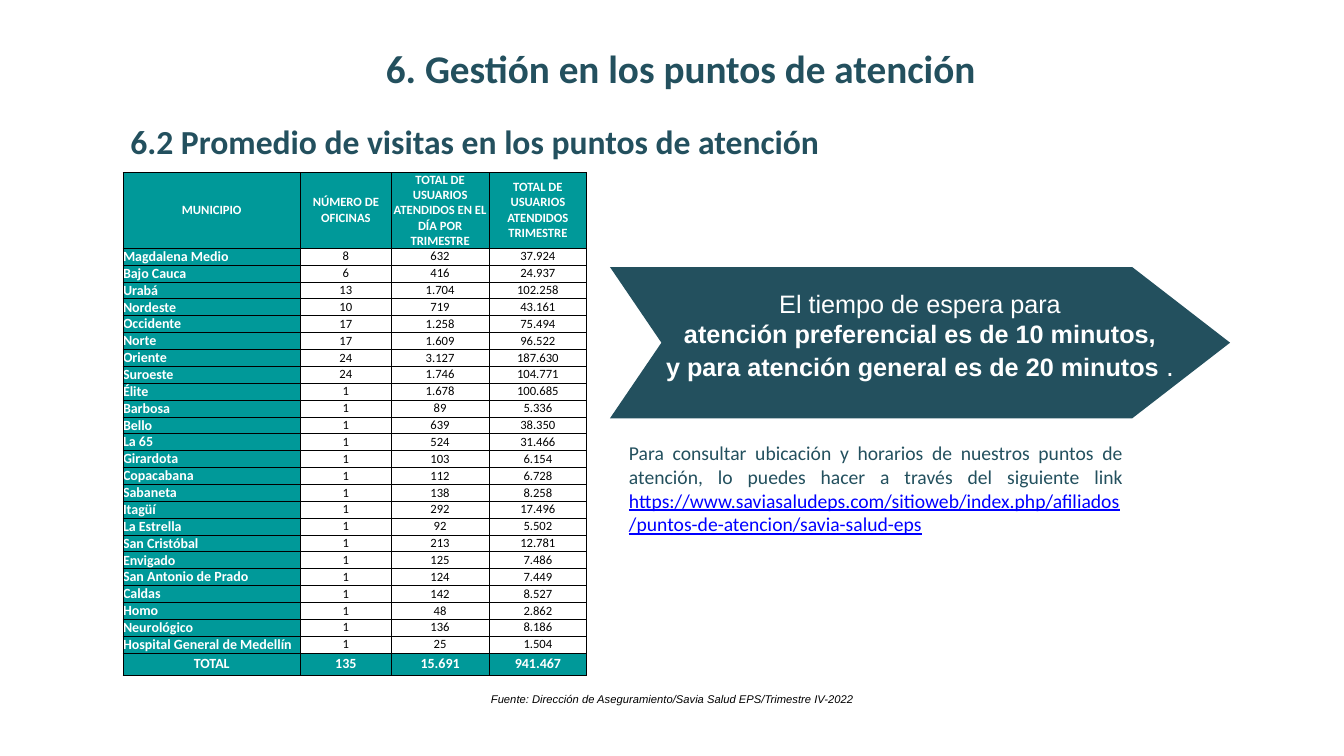
import pptx
import pptx.dml.color
import pptx.enum.text
import pptx.oxml
import pptx.oxml.ns
import pptx.util

Inches = pptx.util.Inches
ALIGN = pptx.enum.text.PP_ALIGN
ANCHOR = pptx.enum.text.MSO_ANCHOR

NAVY, TEAL, WHITE, BLACK, LINK_BLUE = "23505E", "009999", "FFFFFF", "000000", "0000FF"

TITLE = "6. Gestión en los puntos de atención"
SUBTITLE = "6.2 Promedio de visitas en los puntos de atención"
WAITING_TIMES = [
    "El tiempo de espera para",
    "atención preferencial es de 10 minutos,",
    "y para atención general es de 20 minutos ",
]
LINK_INTRO = ("Para consultar ubicación y horarios de nuestros puntos de atención, "
              "lo puedes hacer a través del siguiente link ")
LINK = "https://www.saviasaludeps.com/sitioweb/index.php/afiliados/puntos-de-atencion/savia-salud-eps"
FOOTNOTE = "Fuente: Dirección de Aseguramiento/Savia Salud EPS/Trimestre IV-2022"

HEADER = ("MUNICIPIO", "NÚMERO DE OFICINAS",
          "TOTAL DE USUARIOS ATENDIDOS EN EL DÍA POR TRIMESTRE",
          "TOTAL DE USUARIOS ATENDIDOS TRIMESTRE")
VISITS = [
    ("Magdalena Medio", "8", "632", "37.924"),
    ("Bajo Cauca", "6", "416", "24.937"),
    ("Urabá", "13", "1.704", "102.258"),
    ("Nordeste", "10", "719", "43.161"),
    ("Occidente", "17", "1.258", "75.494"),
    ("Norte", "17", "1.609", "96.522"),
    ("Oriente", "24", "3.127", "187.630"),
    ("Suroeste", "24", "1.746", "104.771"),
    ("Élite", "1", "1.678", "100.685"),
    ("Barbosa", "1", "89", "5.336"),
    ("Bello", "1", "639", "38.350"),
    ("La 65", "1", "524", "31.466"),
    ("Girardota", "1", "103", "6.154"),
    ("Copacabana", "1", "112", "6.728"),
    ("Sabaneta", "1", "138", "8.258"),
    ("Itagüí", "1", "292", "17.496"),
    ("La Estrella", "1", "92", "5.502"),
    ("San Cristóbal", "1", "213", "12.781"),
    ("Envigado", "1", "125", "7.486"),
    ("San Antonio de Prado", "1", "124", "7.449"),
    ("Caldas", "1", "142", "8.527"),
    ("Homo", "1", "48", "2.862"),
    ("Neurológico", "1", "136", "8.186"),
    ("Hospital General de Medellín", "1", "25", "1.504"),
]
TOTAL = ("TOTAL", "135", "15.691", "941.467")
COLUMN_WIDTHS = (1.76, 0.9, 0.97, 0.97)
HEADER_HEIGHT, VISIT_HEIGHT, TOTAL_HEIGHT = 0.67, 0.15, 0.22
ARROW_POINTS = [(6.05, 4.15), (11.23, 4.15), (12.2, 3.4),
                (11.23, 2.65), (6.05, 2.65), (6.56, 3.4)]


def rgb(hex_colour):
    return pptx.dml.color.RGBColor.from_string(hex_colour)


def set_font(font, size, colour, name="Calibri", bold=False, italic=False):
    font.size = pptx.util.Pt(size)
    font.name = name
    font.color.rgb = rgb(colour)
    font.bold = bold
    font.italic = italic


def add_text(slide, box, text, alignment, *font_args, **font_options):
    """Add a wrapping text box with one paragraph and return the paragraph."""
    shape = slide.shapes.add_textbox(*map(Inches, box))
    shape.text_frame.word_wrap = True
    paragraph = shape.text_frame.paragraphs[0]
    paragraph.add_run().text = text
    paragraph.alignment = alignment
    set_font(paragraph.font, *font_args, **font_options)
    return paragraph


def add_borders(cell):
    properties = cell._tc.get_or_add_tcPr()
    for side in ("lnL", "lnR", "lnT", "lnB"):
        properties.append(pptx.oxml.parse_xml(
            f'<a:{side} {pptx.oxml.ns.nsdecls("a")} w="6350"><a:solidFill>'
            f'<a:srgbClr val="{BLACK}"/></a:solidFill></a:{side}>'))


def add_visits_table(slide):
    rows = [HEADER, *VISITS, TOTAL]
    heights = [HEADER_HEIGHT] + [VISIT_HEIGHT] * len(VISITS) + [TOTAL_HEIGHT]
    table = slide.shapes.add_table(
        len(rows), len(HEADER), Inches(1.22), Inches(1.71),
        Inches(sum(COLUMN_WIDTHS)), Inches(sum(heights))).table
    table.first_row = table.horz_banding = False
    for column, width in zip(table.columns, COLUMN_WIDTHS):
        column.width = Inches(width)
    for row_index, values in enumerate(rows):
        table.rows[row_index].height = Inches(heights[row_index])
        for column_index, value in enumerate(values):
            is_visit = values in VISITS
            is_name = is_visit and column_index == 0
            is_filled = is_name or not is_visit
            cell = table.cell(row_index, column_index)
            cell.margin_left = cell.margin_right = cell.margin_top = cell.margin_bottom = 0
            cell.vertical_anchor = ANCHOR.MIDDLE
            add_borders(cell)
            if is_filled:
                cell.fill.solid()
                cell.fill.fore_color.rgb = rgb(TEAL)
            else:
                cell.fill.background()
            cell.text = value
            paragraph = cell.text_frame.paragraphs[0]
            paragraph.alignment = ALIGN.LEFT if is_name else ALIGN.CENTER
            set_font(paragraph.font, 10 if is_name or values is TOTAL else 9,
                     WHITE if is_filled else BLACK, bold=is_filled)


def add_waiting_arrow(slide):
    start, *others = [(Inches(x), Inches(y)) for x, y in ARROW_POINTS]
    builder = slide.shapes.build_freeform(*start)
    builder.add_line_segments(others, close=True)
    arrow = builder.convert_to_shape()
    arrow.shadow.inherit = False
    arrow.fill.solid()
    arrow.fill.fore_color.rgb = rgb(NAVY)
    arrow.line.fill.background()
    frame = arrow.text_frame
    frame.word_wrap = True
    frame.vertical_anchor = ANCHOR.TOP
    frame.margin_top = Inches(0.21)
    for index, line in enumerate(WAITING_TIMES):
        paragraph = frame.add_paragraph() if index else frame.paragraphs[0]
        paragraph.add_run().text = line
        paragraph.alignment = ALIGN.CENTER
        set_font(paragraph.font, 18, WHITE, "Arial", bold=index > 0)
    full_stop = paragraph.add_run()
    full_stop.text = "."
    full_stop.font.size = pptx.util.Pt(20)
    full_stop.font.bold = False


def main():
    presentation = pptx.Presentation()
    presentation.slide_width = Inches(13.33)
    presentation.slide_height = Inches(7.5)
    slide = presentation.slides.add_slide(presentation.slide_layouts[5])

    title = slide.shapes.title
    title.left, title.top, title.width, title.height = map(Inches, (3.6, 0.39, 6.3, 0.57))
    title.text = TITLE
    title.text_frame.vertical_anchor = ANCHOR.TOP
    heading = title.text_frame.paragraphs[0]
    heading.alignment = ALIGN.CENTER
    set_font(heading.font, 28, NAVY, bold=True)

    add_text(slide, (0.95, 1.15, 7.52, 0.5), SUBTITLE, ALIGN.CENTER, 24, NAVY, bold=True)
    add_waiting_arrow(slide)
    guidance = add_text(slide, (6.14, 4.33, 5.1, 1.04), LINK_INTRO, ALIGN.JUSTIFY, 14, NAVY)
    address = guidance.add_run()
    address.text = LINK
    address.font.color.rgb = rgb(LINK_BLUE)
    address.font.underline = True
    add_visits_table(slide)
    add_text(slide, (3.42, 6.82, 6.5, 0.24), FOOTNOTE, ALIGN.CENTER, 8, BLACK, "Arial", italic=True)

    presentation.save("out.pptx")


if __name__ == "__main__":
    main()
